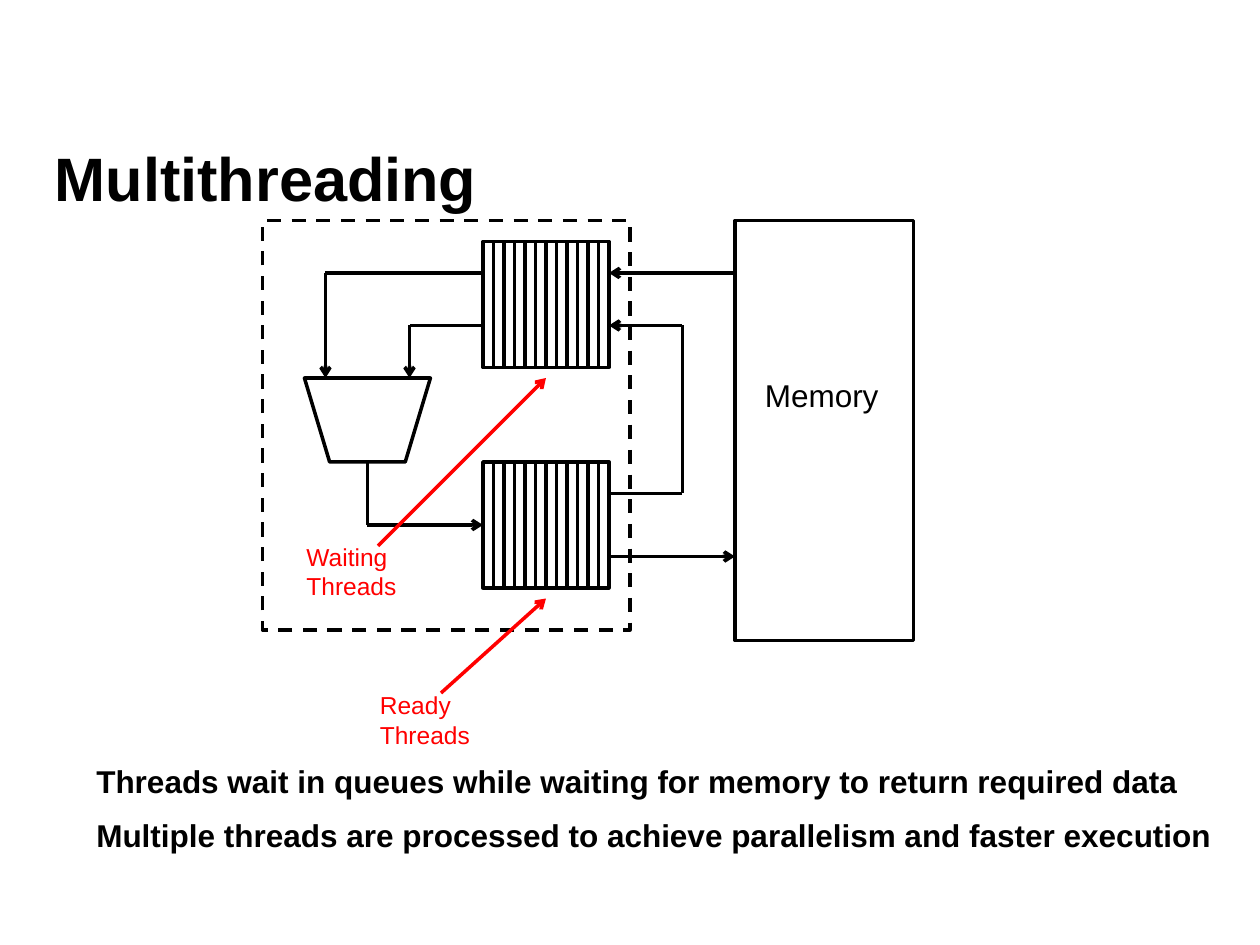
import pptx
import pptx.dml.color
import pptx.enum.dml
import pptx.enum.shapes
import pptx.enum.text
import pptx.oxml.ns
import pptx.util
from lxml import etree

Pt = pptx.util.Pt
Shapes = pptx.enum.shapes.MSO_SHAPE
AutoSize = pptx.enum.text.MSO_AUTO_SIZE
qn = pptx.oxml.ns.qn

COLORS = {"ink": "000000", "label": "FF0000"}
TOP, LEFT, BOTTOM, RIGHT = range(4)  # connection sites


class Diagram:
    font = "Arial"
    line_width = 2

    def __init__(self, slide):
        self.slide = slide

    def color(self, name):
        return pptx.dml.color.RGBColor.from_string(COLORS[name])

    def format_text(self, text_frame, size, color, bold):
        for paragraph in text_frame.paragraphs:
            paragraph.alignment = pptx.enum.text.PP_ALIGN.LEFT
            for run in paragraph.runs:
                run.font.name = self.font
                run.font.size = Pt(size)
                run.font.bold = bold
                run.font.color.rgb = self.color(color)

    def title(self, text, left, top, width, height):
        shape = self.slide.shapes.title
        shape.left, shape.top = Pt(left), Pt(top)
        shape.width, shape.height = Pt(width), Pt(height)
        shape.text_frame.text = text
        shape.text_frame.auto_size = AutoSize.NONE
        shape.text_frame.vertical_anchor = pptx.enum.text.MSO_ANCHOR.BOTTOM
        self.format_text(shape.text_frame, 35, "ink", True)

    def text(self, text, left, top, width, height, size=18, color="ink",
             bold=False, wrap=True):
        shape = self.slide.shapes.add_textbox(
            Pt(left), Pt(top), Pt(width), Pt(height))
        shape.text_frame.text = text
        shape.text_frame.word_wrap = wrap
        shape.text_frame.auto_size = AutoSize.SHAPE_TO_FIT_TEXT
        self.format_text(shape.text_frame, size, color, bold)

    def outline(self, left, top, width, height, kind=Shapes.RECTANGLE):
        shape = self.slide.shapes.add_shape(
            kind, Pt(left), Pt(top), Pt(width), Pt(height))
        shape.shadow.inherit = False
        shape.fill.background()
        shape.line.color.rgb = self.color("ink")
        shape.line.width = Pt(self.line_width)
        return shape

    def queue(self, left, top, cells=12, cell_width=6, height=72):
        return [self.outline(left + i * cell_width, top, cell_width, height)
                for i in range(cells)]

    def line(self, start, end, arrow=False, color="ink"):
        connector = self.slide.shapes.add_connector(
            pptx.enum.shapes.MSO_CONNECTOR.STRAIGHT,
            *(Pt(value) for value in start + end))
        connector.line.color.rgb = self.color(color)
        connector.line.width = Pt(self.line_width)
        if arrow:
            line = connector.line._get_or_add_ln()
            etree.SubElement(line, qn("a:tailEnd"), type="arrow")
        etree.SubElement(connector._element.spPr, qn("a:effectLst"))
        return connector

    def route(self, *points):
        """Draw straight segments through the points, arrow on the last."""
        segments = list(zip(points, points[1:]))
        return [self.line(start, end, arrow=(i == len(segments)))
                for i, (start, end) in enumerate(segments, 1)]


def main():
    presentation = pptx.Presentation()
    presentation.slide_width, presentation.slide_height = Pt(720), Pt(540)
    slide = presentation.slides.add_slide(presentation.slide_layouts[5])
    diagram = Diagram(slide)
    diagram.title("Multithreading", 24, 66, 648, 60)

    # Thread queues, processor boundary, memory and execution unit
    diagram.queue(276, 138)
    ready_queue = diagram.queue(276, 264)
    processor = diagram.outline(138, 138, 234, 210)
    processor.rotation = 270
    processor.line.dash_style = pptx.enum.dml.MSO_LINE.DASH
    diagram.outline(420, 126, 102, 240)
    diagram.text("Memory", 430, 211.5, 80, 29, wrap=False)
    unit = diagram.outline(174, 216, 72, 48, Shapes.FLOWCHART_MANUAL_OPERATION)

    # Traffic between queues and memory
    diagram.route((348, 282), (390, 282), (390, 186), (348, 186))
    diagram.route((348, 318), (420, 318))
    diagram.route((420, 156), (348, 156))

    # Waiting queue into the unit, and the unit into the ready queue
    for lane, top in ((186, 156), (234, 186)):
        diagram.route((276, top), (lane, top), (lane, 216))
    drop, feed = diagram.route((210, 264), (210, 300), (276, 300))
    drop.begin_connect(unit, BOTTOM)
    feed.end_connect(ready_queue[0], LEFT)

    # Queue labels with pointers
    diagram.text("Waiting Threads", 168, 306, 84, 41, 14, "label")
    diagram.line((216, 312), (312, 216), True, "label")
    diagram.text("Ready Threads", 210, 391, 72, 41, 14, "label")
    diagram.line((252, 396), (312, 342), True, "label")

    # Takeaways
    takeaways = (
        "Threads wait in queues while waiting for memory to return required data",
        "Multiple threads are processed to achieve parallelism and faster execution",
    )
    for i, takeaway in enumerate(takeaways):
        diagram.text(takeaway, 48, 432 + i * 31, 654, 29, bold=True)

    presentation.save("out.pptx")


if __name__ == "__main__":
    main()
